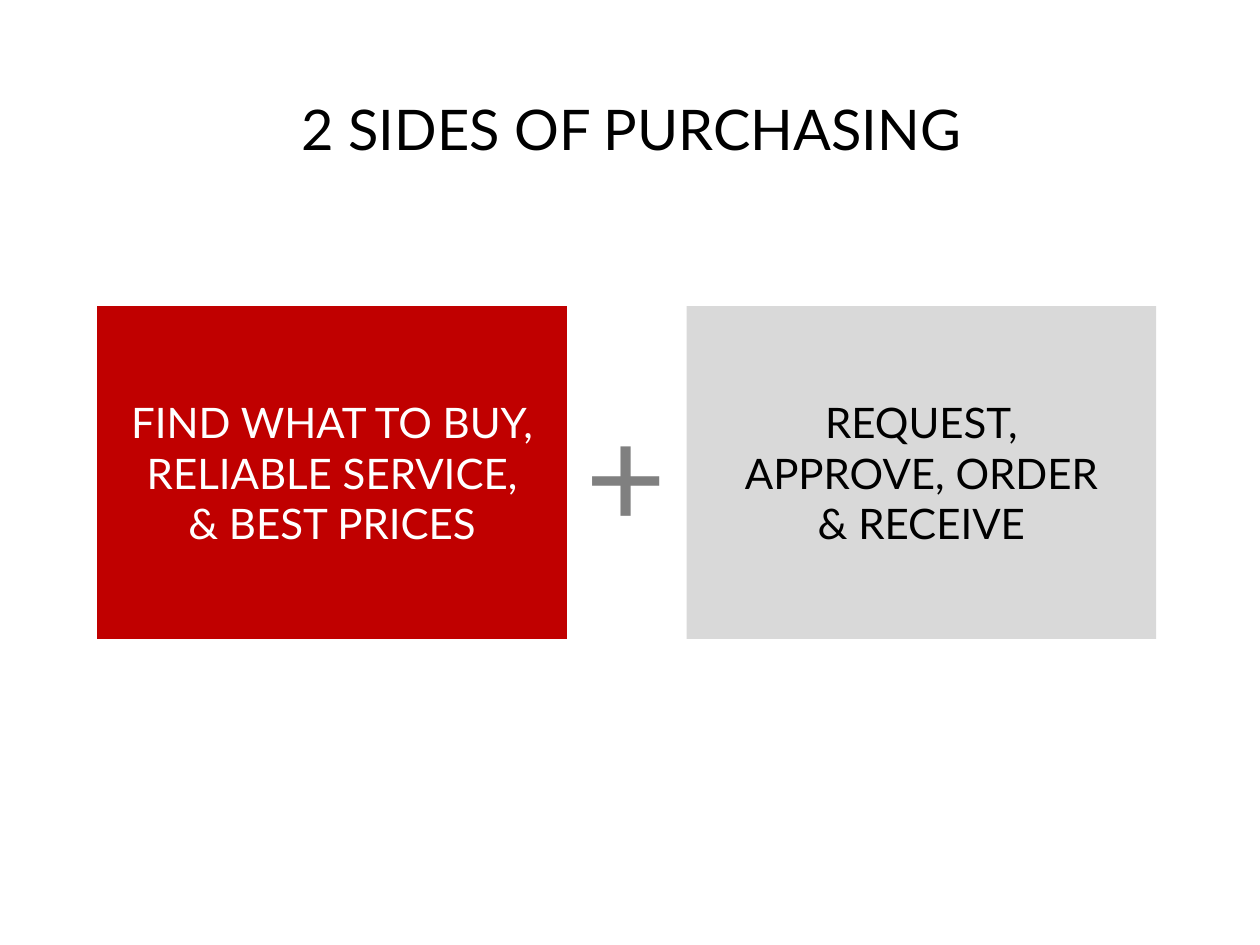
from dataclasses import dataclass

from pptx import Presentation, util as u
from pptx.dml.color import RGBColor
from pptx.enum import shapes, text
from pptx.slide import Slide
from pptx.text.text import TextFrame

FONT = "Lato"
COLORS = {
    "red": "C00000",
    "light": "D9D9D9",
    "gray": "808080",
    "white": "FFFFFF",
    "black": "000000",
}
# Shared geometry of the two panels, in centimetres
PANEL_TOP, PANEL_WIDTH, PANEL_HEIGHT = 6.17, 9.47, 6.71


@dataclass
class Panel:
    left: float
    fill: str
    color: str
    wording: str


@dataclass
class Label:
    left: float
    top: float
    width: float
    height: float
    size: int
    color: str
    wording: str


PANELS = [
    Panel(1.96, "red", "white", "FIND WHAT TO BUY,\nRELIABLE SERVICE,\n& BEST PRICES"),
    Panel(13.84, "light", "black", "REQUEST,\nAPPROVE, ORDER\n& RECEIVE"),
]
LABELS = [
    Label(10.31, 7.7, 4.62, 3.68, 80, "gray", "+"),
    Label(0.1, 1.78, 25.27, 1.63, 32, "black", "2 SIDES OF PURCHASING"),
]


def rgb(name: str) -> RGBColor:
    return RGBColor.from_string(COLORS[name])


def write(frame: TextFrame, wording: str, size: int, color: str) -> None:
    """Set centred text, one paragraph per line."""
    frame.text = wording
    frame.word_wrap = True
    for paragraph in frame.paragraphs:
        paragraph.alignment = text.PP_ALIGN.CENTER
        for run in paragraph.runs:
            run.font.name = FONT
            run.font.size = u.Pt(size)
            run.font.color.rgb = rgb(color)


def draw_panel(slide: Slide, panel: Panel) -> None:
    shape = slide.shapes.add_shape(
        shapes.MSO_SHAPE.RECTANGLE,
        u.Cm(panel.left), u.Cm(PANEL_TOP), u.Cm(PANEL_WIDTH), u.Cm(PANEL_HEIGHT),
    )
    shape.shadow.inherit = False
    shape.fill.solid()
    shape.fill.fore_color.rgb = rgb(panel.fill)
    shape.line.fill.background()
    shape.text_frame.vertical_anchor = text.MSO_ANCHOR.MIDDLE
    write(shape.text_frame, panel.wording, 24, panel.color)


def draw_label(slide: Slide, label: Label) -> None:
    shape = slide.shapes.add_textbox(
        u.Cm(label.left), u.Cm(label.top), u.Cm(label.width), u.Cm(label.height)
    )
    write(shape.text_frame, label.wording, label.size, label.color)
    shape.text_frame.auto_size = text.MSO_AUTO_SIZE.SHAPE_TO_FIT_TEXT


def main() -> None:
    presentation = Presentation()
    presentation.slide_width = u.Cm(25.4)
    presentation.slide_height = u.Cm(19.05)
    slide = presentation.slides.add_slide(presentation.slide_layouts[6])

    # The two sides of purchasing
    for panel in PANELS:
        draw_panel(slide, panel)

    # Plus sign and title
    for label in LABELS:
        draw_label(slide, label)

    presentation.save("out.pptx")


if __name__ == "__main__":
    main()
